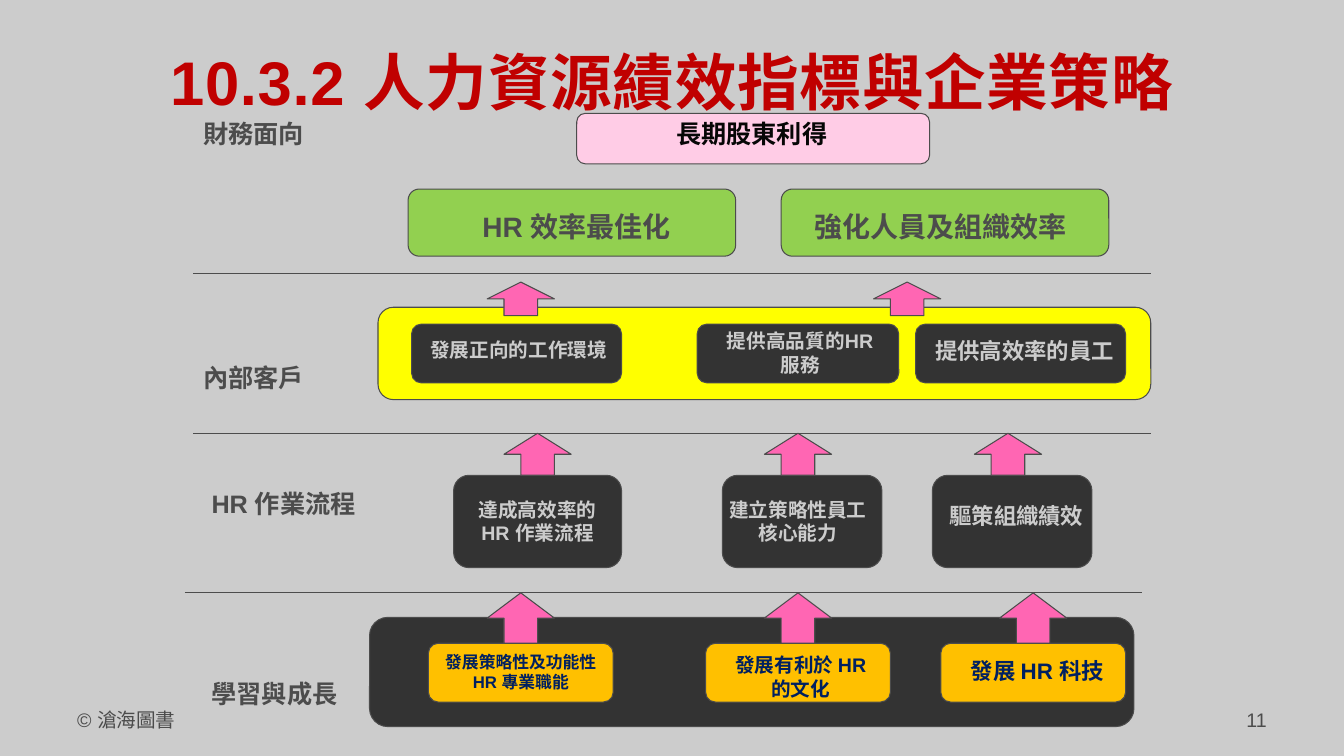
"""Build the slide on HR performance indicators and company strategy."""
from lxml import etree
from pptx import Presentation
from pptx import util as u
from pptx.dml import color
from pptx.enum import shapes, text
from pptx.oxml import ns

GREY, DARK, PALE, NAVY = "4C4C4C", "333333", "CCCCCC", "002060"
GREEN, AMBER, PINK = "92D050", "FFC000", "FF66B3"
LEFT, CENTER, RIGHT = text.PP_ALIGN.LEFT, text.PP_ALIGN.CENTER, text.PP_ALIGN.RIGHT
ROUNDED, ARROW = shapes.MSO_SHAPE.ROUNDED_RECTANGLE, shapes.MSO_SHAPE.UP_ARROW

TITLE = "10.3.2 人力資源績效指標與企業策略"

# rows of equal boxes: fill, top, height, [(left, width)]
BOX_ROWS = [
    (DARK, 441, 78, [(264, 546)]),
    ("FFFF00", 219.5, 66, [(270, 552)]),
    ("FFCCE6", 81, 36, [(412, 252)]),
    (GREEN, 135, 48, [(291.5, 234), (558, 234)]),
    (DARK, 231.5, 42, [(294, 150), (498, 144), (654, 150)]),
    (DARK, 339.5, 66, [(324, 120), (516, 114), (666, 114)]),
    (AMBER, 459.5, 42, [(306, 132), (504, 132), (672, 132)]),
]
RULE_WIDTH = 684
RULES = [(138, 195.5), (138, 309.5), (132, 423.5)]
ARROW_WIDTH = 48
ARROW_ROWS = [
    (201.5, 24, [348, 624]),
    (309.5, 30, [360, 546, 696]),
    (423.5, 36, [348, 546, 714]),
]

# groups of text: size, colour, bold, alignment, [(left, top, width, height, lines)]
TEXT_GROUPS = [
    (14, GREY, False, LEFT, [(48, 502, 224, 37, ["© 滄海圖書"])]),
    (14, GREY, False, RIGHT, [(688, 502, 224, 37, ["11"])]),
    (18, GREY, True, LEFT, [
        (138, 81, 120, 29, ["財務面向"]),
        (138, 255.5, 120, 29, ["內部客戶"]),
        (144, 345.5, 120, 29, ["HR 作業流程"]),
        (144, 481, 120, 29, ["學習與成長"]),
    ]),
    (18, "060606", True, CENTER, [(408, 81, 258, 29, ["長期股東利得"])]),
    (20, GREY, True, CENTER, [
        (280, 146, 264, 32, ["HR 效率最佳化"]),
        (534, 146, 276, 32, ["強化人員及組織效率"]),
    ]),
    (14, PALE, True, CENTER, [
        (286.5, 237.5, 168, 24.5, ["發展正向的工作環境"]),
        (498, 231.5, 147, 41, ["提供高品質的HR", "服務"]),
        (330, 352, 108, 41, ["達成高效率的 HR 作業流程"]),
        (510, 352, 120, 41, ["建立策略性員工", "核心能力"]),
    ]),
    (16, PALE, True, CENTER, [
        (642, 237, 180, 41, ["提供高效率的員工"]),
        (666, 355, 120, 26.5, ["驅策組織績效"]),
    ]),
    (12, NAVY, True, CENTER, [
        (309, 462, 126, 37, ["發展策略性及功能性", "HR 專業職能"]),
    ]),
    (14, NAVY, True, CENTER, [
        (509, 463, 126, 41, ["發展有利於 HR", "的文化"]),
    ]),
    (16, NAVY, True, CENTER, [(678, 466, 126, 26.5, ["發展 HR 科技"])]),
]


def rgb(code):
    """Turn a hex string into a colour."""
    return color.RGBColor.from_string(code)


def place(*lengths):
    """Turn numbers into lengths in points."""
    return [u.Pt(length) for length in lengths]


def style_line(line):
    """Give a line the common thin grey look."""
    line.color.rgb = rgb(GREY)
    line.width = u.Pt(0.75)


def add_shape(page, kind, fill, *frame):
    """Draw a filled, outlined shape."""
    shape = page.shapes.add_shape(kind, *place(*frame))
    shape.shadow.inherit = False
    shape.fill.solid()
    shape.fill.fore_color.rgb = rgb(fill)
    style_line(shape.line)


def add_rule(page, left, top):
    """Draw a horizontal divider."""
    rule = page.shapes.add_connector(
        shapes.MSO_CONNECTOR.STRAIGHT, *place(left, top, left + RULE_WIDTH, top))
    style_line(rule.line)
    etree.SubElement(rule._element.spPr, ns.qn("a:effectLst"))


def add_text(page, frame, lines, size, hue, bold, align, name="Arial"):
    """Write lines of text in a wrapping box."""
    box = page.shapes.add_textbox(*place(*frame))
    box.text_frame.word_wrap = True
    box.text_frame.text = "\n".join(lines)
    for para in box.text_frame.paragraphs:
        para.alignment = align
        for span in para.runs:
            span.font.name = name
            span.font.size = u.Pt(size)
            span.font.bold = bold
            span.font.color.rgb = rgb(hue)
    return box


def main():
    """Assemble and save the deck."""
    deck = Presentation()
    deck.slide_width, deck.slide_height = place(960, 540)
    page = deck.slides.add_slide(deck.slide_layouts[6])
    page.background.fill.solid()
    page.background.fill.fore_color.rgb = rgb(PALE)

    title = add_text(page, (48, 18, 864, 79), [TITLE], 44, "C00000", True, CENTER)
    title.text_frame.vertical_anchor = text.MSO_ANCHOR.MIDDLE
    title.text_frame.paragraphs[0].runs[0]._r.get_or_add_rPr().set("spc", "50")

    for fill, top, height, boxes in BOX_ROWS:
        for left, width in boxes:
            add_shape(page, ROUNDED, fill, left, top, width, height)
    for left, top in RULES:
        add_rule(page, left, top)
    for top, height, lefts in ARROW_ROWS:
        for left in lefts:
            add_shape(page, ARROW, PINK, left, top, ARROW_WIDTH, height)
    for size, hue, bold, align, entries in TEXT_GROUPS:
        for *frame, lines in entries:
            name = "Noto Sans CJK SC" if hue == "060606" else "Arial"
            add_text(page, frame, lines, size, hue, bold, align, name)
    deck.save("out.pptx")


if __name__ == "__main__":
    main()
